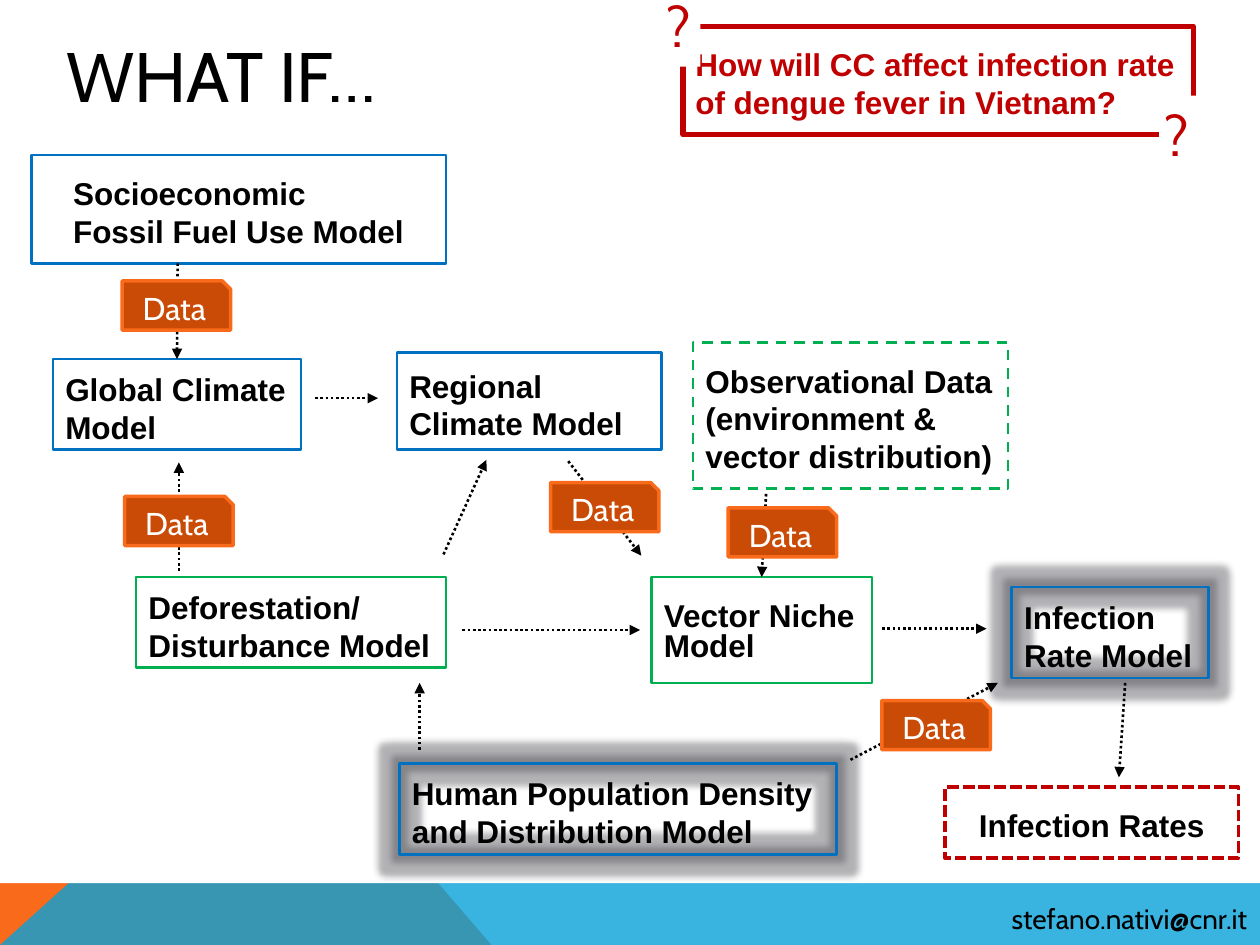
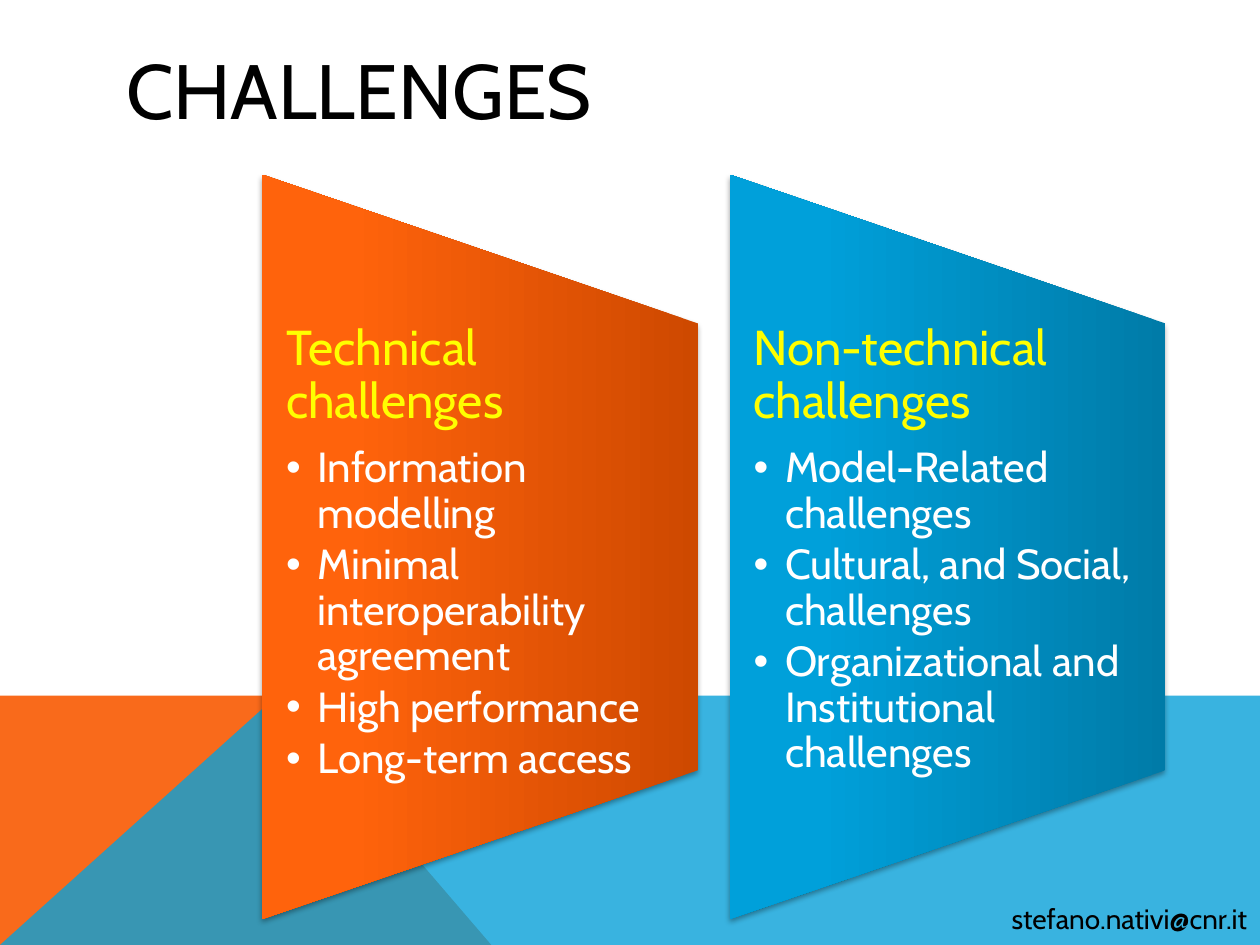
import collections

import lxml.etree
import pptx
import pptx.dml.color
import pptx.enum.dml
import pptx.enum.shapes
import pptx.enum.text
import pptx.oxml.ns
import pptx.util

RGB = pptx.dml.color.RGBColor
KIND = pptx.enum.shapes.MSO_SHAPE
DASH = pptx.enum.dml.MSO_LINE
ALIGN = pptx.enum.text.PP_ALIGN
ANCHOR = pptx.enum.text.MSO_ANCHOR

BLACK = RGB(0x00, 0x00, 0x00)
WHITE = RGB(0xFF, 0xFF, 0xFF)
YELLOW = RGB(0xFF, 0xFF, 0x00)
BLUE = RGB(0x00, 0x70, 0xC0)
GREEN = RGB(0x00, 0xB0, 0x50)
RED = RGB(0xC0, 0x00, 0x00)
ORANGE = RGB(0xF9, 0x6A, 0x1B)
RUST = RGB(0xCA, 0x4B, 0x05)
SKY = RGB(0x08, 0xA1, 0xD9)
HALO = RGB(0x40, 0x40, 0x48)
WARM = (RGB(0xCE, 0x49, 0x00), RGB(0xFF, 0x63, 0x0C))
COOL = (RGB(0x00, 0x7B, 0xA8), RGB(0x00, 0xA0, 0xDA))

COLS, ROWS = 100, 75
CELL = pptx.util.Inches(10) // COLS
PLAIN = (0.1, 0.05, 0.1, 0.05)
LOW = (0.1, 0.15, 0.1, 0.1)


class Box(collections.namedtuple("Box", "x y w h")):
    """A region in grid cells."""

    def sub(self, x, y, w, h):
        return Box(self.x + x, self.y + y, w, h)

    def spot(self, x, y):
        return cells(self.x + x), cells(self.y + y)

    def size(self):
        return [cells(n) for n in self]


PAGE = Box(0, 0, COLS, ROWS)


def cells(count):
    return pptx.util.Emu(round(count * CELL))


def node(parent, tag, **attrs):
    child = lxml.etree.SubElement(parent, pptx.oxml.ns.qn("a:" + tag))
    for key, value in attrs.items():
        child.set(key, str(value))
    return child


def tint(parent, color, alpha):
    node(node(parent, "srgbClr", val=color), "alpha", val=alpha * 1000)


def setup(frame, inset=PLAIN, anchor=ANCHOR.TOP):
    frame.word_wrap = True
    frame.auto_size = pptx.enum.text.MSO_AUTO_SIZE.NONE
    frame.vertical_anchor = anchor
    (frame.margin_left, frame.margin_top,
     frame.margin_right, frame.margin_bottom) = map(pptx.util.Inches, inset)
    return frame


def write(frame, text, face="Cabin", size=18, color=BLACK, bold=False,
          align=ALIGN.LEFT, lead=1.0, after=0, level=0, bullet=None):
    """Add each line of the text to the frame as a paragraph."""
    for line in text.split("\n"):
        para = frame.add_paragraph() if frame.text else frame.paragraphs[0]
        para.alignment, para.level, para.line_spacing = align, level, lead
        para.space_before = pptx.util.Pt(0)
        para.space_after = pptx.util.Pt(after)
        props = para._p.get_or_add_pPr()
        hang = pptx.util.Inches(0.25) if bullet else 0
        props.set("marL", str(hang))
        props.set("indent", str(-hang))
        if bullet:
            node(props, "buFont", typeface="Arial")
            node(props, "buChar", char=bullet)
        else:
            node(props, "buNone")
        run = para.add_run()
        run.text = line
        font = run.font
        font.name, font.size, font.bold = face, pptx.util.Pt(size), bold
        font.color.rgb = color


def paint(shape, fill=None, line=None, width=1.5, dash=None):
    shape.shadow.inherit = False
    if fill is None:
        shape.fill.background()
    else:
        shape.fill.solid()
        shape.fill.fore_color.rgb = fill
    if line is None:
        shape.line.fill.background()
    else:
        shape.line.color.rgb = line
        shape.line.width = pptx.util.Pt(width)
        if dash:
            shape.line.dash_style = dash
    return shape


def block(slide, box, kind=KIND.RECTANGLE, **look):
    return paint(slide.shapes.add_shape(kind, *box.size()), **look)


def effects(shape):
    return shape.element.spPr.find(pptx.oxml.ns.qn("a:effectLst"))


def glow(shape):
    tint(node(effects(shape), "glow", rad=pptx.util.Pt(8)), HALO, 40)


def shade(shape):
    cast = node(effects(shape), "outerShdw", blurRad=40000, dist=23000,
                dir=5400000, rotWithShape=0)
    tint(cast, BLACK, 35)


def wedge(slide, box, shares, color):
    points = [box.spot(x * box.w, y * box.h) for x, y in shares]
    build = slide.shapes.build_freeform(*points[0])
    build.add_line_segments(points[1:])
    return paint(build.convert_to_shape(), fill=color)


def band(slide, box):
    """Draw the coloured foot of the slide and its address."""
    wedge(slide, box, [(0, 1), (0, 0), (0.22, 0), (0.39, 1)], ORANGE)
    sea = wedge(slide, box, [(0, 1), (0.22, 0), (1, 0), (1, 1)], SKY)
    color = next(sea.element.spPr.iter(pptx.oxml.ns.qn("a:srgbClr")))
    node(color, "alpha", val=80000)
    area = box.sub(79.3, 15.9, 21.1, 3.7)
    label = slide.shapes.add_textbox(*area.size())
    write(setup(label.text_frame), "stefano.nativi@cnr.it", size=16)


def place(holder, box):
    """Move a placeholder to the box, in front of what is drawn so far."""
    holder.left, holder.top, holder.width, holder.height = box.size()
    holder.element.getparent().append(holder.element)
    return holder.text_frame


def title(slide, box, text, size):
    frame = setup(place(slide.shapes.title, box), anchor=ANCHOR.MIDDLE)
    write(frame, text, size=size)


def start(deck, layout):
    slide = deck.slides.add_slide(deck.slide_layouts[layout])
    band(slide, PAGE.sub(0, 55.2, COLS, 19.8))
    return slide


def model(slide, box, text, line=BLUE, width=1.5, dash=None, inset=LOW,
          anchor=ANCHOR.MIDDLE, **form):
    shape = block(slide, box, line=line, width=width, dash=dash)
    frame = setup(shape.text_frame, inset, anchor)
    write(frame, text, **{"face": "Arial", "bold": True, **form})
    return shape


def arrow(slide, tail, tip):
    link = slide.shapes.add_connector(
        pptx.enum.shapes.MSO_CONNECTOR.STRAIGHT, *tail, *tip)
    link.line.color.rgb = BLACK
    link.line.width = pptx.util.Pt(1.5)
    link.line.dash_style = DASH.ROUND_DOT
    node(link.line._get_or_add_ln(), "tailEnd", type="triangle")
    node(link.element.spPr, "effectLst")
    return link


def tag(slide, box):
    shape = block(slide, box, KIND.SNIP_1_RECTANGLE, fill=RUST,
                  line=ORANGE, width=2)
    write(setup(shape.text_frame, anchor=ANCHOR.MIDDLE), "Data",
          color=WHITE, align=ALIGN.CENTER)


def query(slide, box):
    """Frame the question, with a mark on two of its corners."""
    model(slide, box, "How will CC affect infection rate\n"
          "of dengue fever in Vietnam?", line=RED, width=3,
          anchor=ANCHOR.TOP, color=RED)
    for x, y in [(-1.7, -3.2), (box.w - 2.7, 5.5)]:
        mark = block(slide, box.sub(x, y, 3.1, 6.4), fill=WHITE)
        write(setup(mark.text_frame, (0.04,) * 4), "?", size=32, color=RED)


def flow(slide, box):
    """Draw the chain of models, its links and the data passed on."""
    top = ANCHOR.TOP
    model(slide, box.sub(0, 0, 32.9, 8.6),
          "Socioeconomic\nFossil Fuel Use Model", inset=(0.33, 0.15, 0.1, 0.1))
    globe = model(slide, box.sub(1.7, 16.2, 19.7, 7.2),
                  "Global Climate\nModel")
    model(slide, box.sub(29, 15.7, 21, 7.7), "Regional\nClimate Model")
    model(slide, box.sub(52.5, 14.9, 25, 11.6),
          "Observational Data\n(environment &\nvector distribution)",
          line=GREEN, dash=DASH.DASH, anchor=top)
    model(slide, box.sub(8.3, 33.5, 24.6, 7.2),
          "Deforestation/\nDisturbance Model", line=GREEN)
    niche = model(slide, box.sub(49.2, 33.5, 17.5, 8.4),
                  "Vector Niche\nModel", line=GREEN, lead=0.8)
    glow(model(slide, box.sub(77.8, 34.3, 15.6, 7.2),
               "Infection\nRate Model"))
    glow(model(slide, box.sub(29.2, 48.3, 34.7, 7.2),
               "Human Population Density\nand Distribution Model"))
    model(slide, box.sub(72.5, 50.2, 23.3, 5.6), "Infection Rates",
          line=RED, width=2.25, dash=DASH.SQUARE_DOT, anchor=top,
          align=ALIGN.CENTER)

    links = [
        ((11.6, 8.6), (11.7, 16.1), globe),
        ((22.5, 19.3), (27.5, 19.3), None),
        ((11.7, 33), (11.7, 24.4), None),
        ((32.7, 31.7), (36.1, 24.2), None),
        ((42.6, 24.3), (48.4, 31.8), None),
        ((58.3, 26.9), (58.3, 33.5), niche),
        ((34.2, 37.7), (48.3, 37.7), None),
        ((67.5, 37.6), (75.8, 37.6), None),
        ((30.8, 47.2), (30.8, 41.9), None),
        ((65, 48), (76.7, 41.9), None),
        ((86.8, 41.9), (86.3, 49.4), None),
    ]
    for tail, tip, goal in links:
        link = arrow(slide, box.spot(*tail), box.spot(*tip))
        if goal:
            link.end_connect(goal, 0)

    for x, y in [(7.2, 10), (7.4, 27.1), (41.2, 26),
                 (55.3, 28), (67.5, 43.3)]:
        tag(slide, box.sub(x, y, 8.6, 3.9))


def panel(slide, box, holder, colors, head, items):
    """Draw a slanted panel with a heading and a list."""
    turned = box.sub((box.w - box.h) / 2, (box.h - box.w) / 2, box.h, box.w)
    shape = block(slide, turned, KIND.FLOWCHART_MANUAL_OPERATION)
    shape.rotation = 270
    shape.fill.gradient()
    shape.fill.gradient_angle = 90
    for stop, color, share in zip(shape.fill.gradient_stops, colors, (0, 0.8)):
        stop.color.rgb, stop.position = color, share
    shade(shape)
    area = box.sub(0, 0.2 * box.h, box.w, 0.6 * box.h)
    frame = setup(place(holder, area), (0.19, 0, 0.19, 0))
    write(frame, head, size=28, color=YELLOW, lead=0.9, after=9.8)
    write(frame, items, size=24, color=WHITE, lead=0.9, after=3.6,
          level=1, bullet="•")


def what_if(deck):
    slide = start(deck, 5)
    block(slide, PAGE.sub(0, 55.1, COLS, 15), fill=WHITE)
    title(slide, PAGE.sub(4.3, 2.9, 45.2, 6), "WHAT IF…", 40)
    flow(slide, PAGE.sub(2.5, 12.3, 95.8, 55.8))
    query(slide, PAGE.sub(54.2, 2.1, 40.5, 8.6))


def hurdles(deck):
    slide = start(deck, 3)
    title(slide, PAGE.sub(9, 4, 82.2, 6), "CHALLENGES", 44)
    panels = [
        (WARM, "Technical challenges",
         "Information modelling\nMinimal interoperability agreement\n"
         "High performance\nLong-term access"),
        (COOL, "Non-technical challenges",
         "Model-Related challenges\nCultural, and Social, challenges\n"
         "Organizational and Institutional challenges"),
    ]
    holders = {h.placeholder_format.idx: h for h in slide.placeholders}
    for i, parts in enumerate(panels):
        area = PAGE.sub(20.8 + 37.1 * i, 13.85, 34.6, 59.1)
        panel(slide, area, holders[i + 1], *parts)


def main():
    deck = pptx.Presentation()
    deck.slide_width, deck.slide_height = cells(COLS), cells(ROWS)
    what_if(deck)
    hurdles(deck)
    deck.save("out.pptx")


if __name__ == "__main__":
    main()
